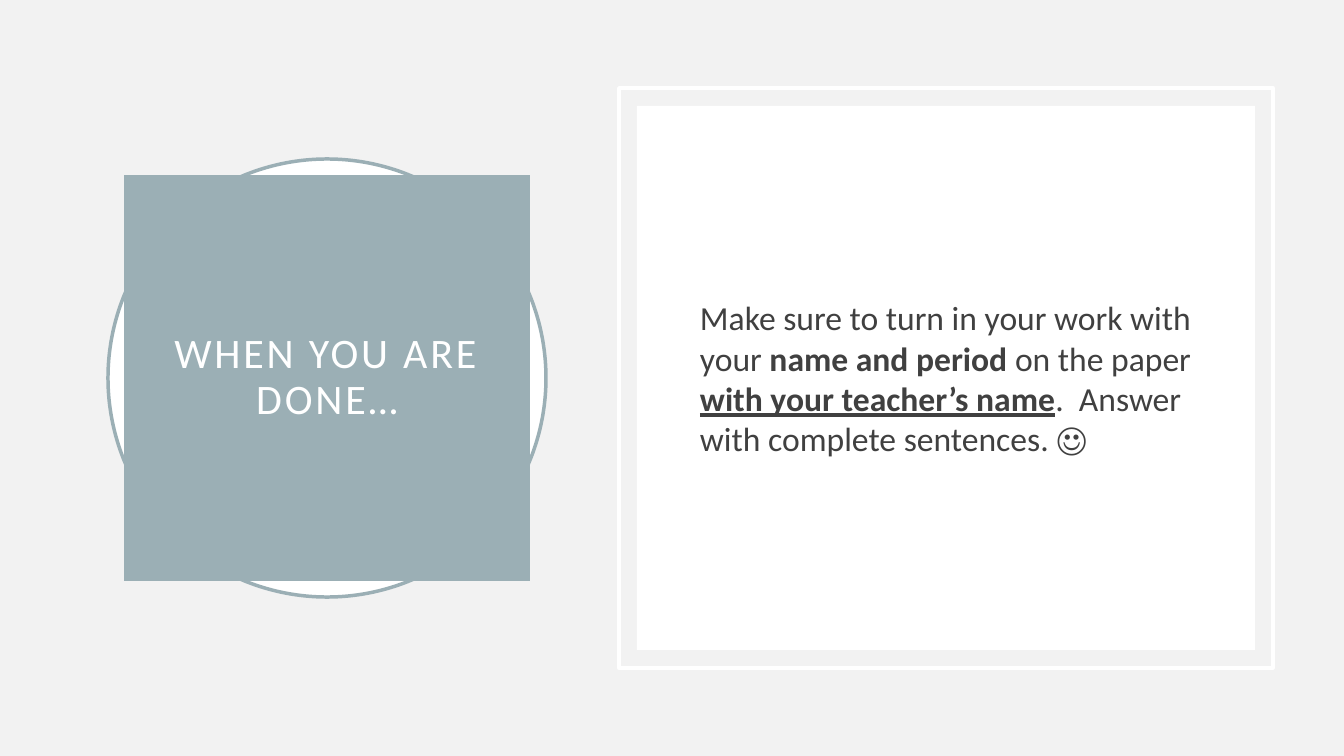
from lxml import etree
from pptx import Presentation, util as u
from pptx.dml.color import RGBColor
from pptx.enum import shapes, text
from pptx.oxml.ns import qn

TITLE = "WHEN YOU ARE DONE…"
BODY = [  # text, bold, underlined
    ("Make sure to turn in your work with your ", False, False),
    ("name and period ", True, False),
    ("on the paper ", False, False),
    ("with your teacher’s name", True, True),
    (".  Answer with complete sentences. ☺", False, False),
]
FONT = "Calibri"
GREY, WHITE, TEAL, INK = "F2F2F2", "FFFFFF", "9BAFB5", "404040"

# left, top, width, height in px
SQUARE = (124, 175, 406, 406)
PANEL = (637, 106, 618, 544)
BODY_BOX = (690, 159, 513, 438)
CIRCLE_GAP, FRAME_GAP = 16, 18


def px(n):
    return u.Emu(round(n * 914400 / 100.8))


def color(value):
    return RGBColor.from_string(value)


def grow(box, gap):
    x, y, w, h = box
    return x - gap, y - gap, w + 2 * gap, h + 2 * gap


def add_panel(s, kind, box, fill=None, line=None):
    sp = s.shapes.add_shape(kind, *map(px, box))
    sp.shadow.inherit = False
    if fill:
        sp.fill.solid()
        sp.fill.fore_color.rgb = color(fill)
    else:
        sp.fill.background()
    if line:
        sp.line.color.rgb = color(line)
        sp.line.width = u.Pt(2.5)
    else:
        sp.line.fill.background()


def place(s, sp, box, inset):
    """Position a placeholder, bring it to the front and return its paragraph."""
    sp.left, sp.top, sp.width, sp.height = map(px, box)
    s.shapes._spTree.append(sp._element)
    tf = sp.text_frame
    tf.word_wrap = True
    tf.auto_size = text.MSO_AUTO_SIZE.NONE
    tf.vertical_anchor = text.MSO_ANCHOR.MIDDLE
    tf.margin_left = tf.margin_right = px(inset)
    tf.margin_top = tf.margin_bottom = px(inset)
    return tf.paragraphs[0]


def add_run(p, words, size, ink, bold=False, underline=False):
    r = p.add_run()
    r.text = words
    r.font.name, r.font.size = FONT, u.Pt(size)
    r.font.bold, r.font.underline = bold, underline
    r.font.color.rgb = color(ink)
    return r


prs = Presentation()
prs.slide_width, prs.slide_height = px(1344), px(756)
s = prs.slides.add_slide(prs.slide_layouts[1])
s.background.fill.solid()
s.background.fill.fore_color.rgb = color(GREY)
title, body = s.placeholders

add_panel(s, shapes.MSO_SHAPE.OVAL, grow(SQUARE, CIRCLE_GAP), WHITE, TEAL)
p = place(s, title, SQUARE, 20)
title.fill.solid()
title.fill.fore_color.rgb = color(TEAL)
p.alignment = text.PP_ALIGN.CENTER
p.line_spacing = 0.9
r = add_run(p, TITLE, 30, WHITE)
r.font._element.set("spc", "200")

add_panel(s, shapes.MSO_SHAPE.RECTANGLE, grow(PANEL, FRAME_GAP), line=WHITE)
add_panel(s, shapes.MSO_SHAPE.RECTANGLE, PANEL, WHITE)
p = place(s, body, BODY_BOX, 10)
p.alignment = text.PP_ALIGN.LEFT
p.space_before = u.Pt(10)
pPr = p._p.get_or_add_pPr()
pPr.set("marL", "0")
pPr.set("indent", "0")
etree.SubElement(pPr, qn("a:buNone"))
for words, bold, underline in BODY:
    add_run(p, words, 24, INK, bold, underline)

prs.save("out.pptx")
